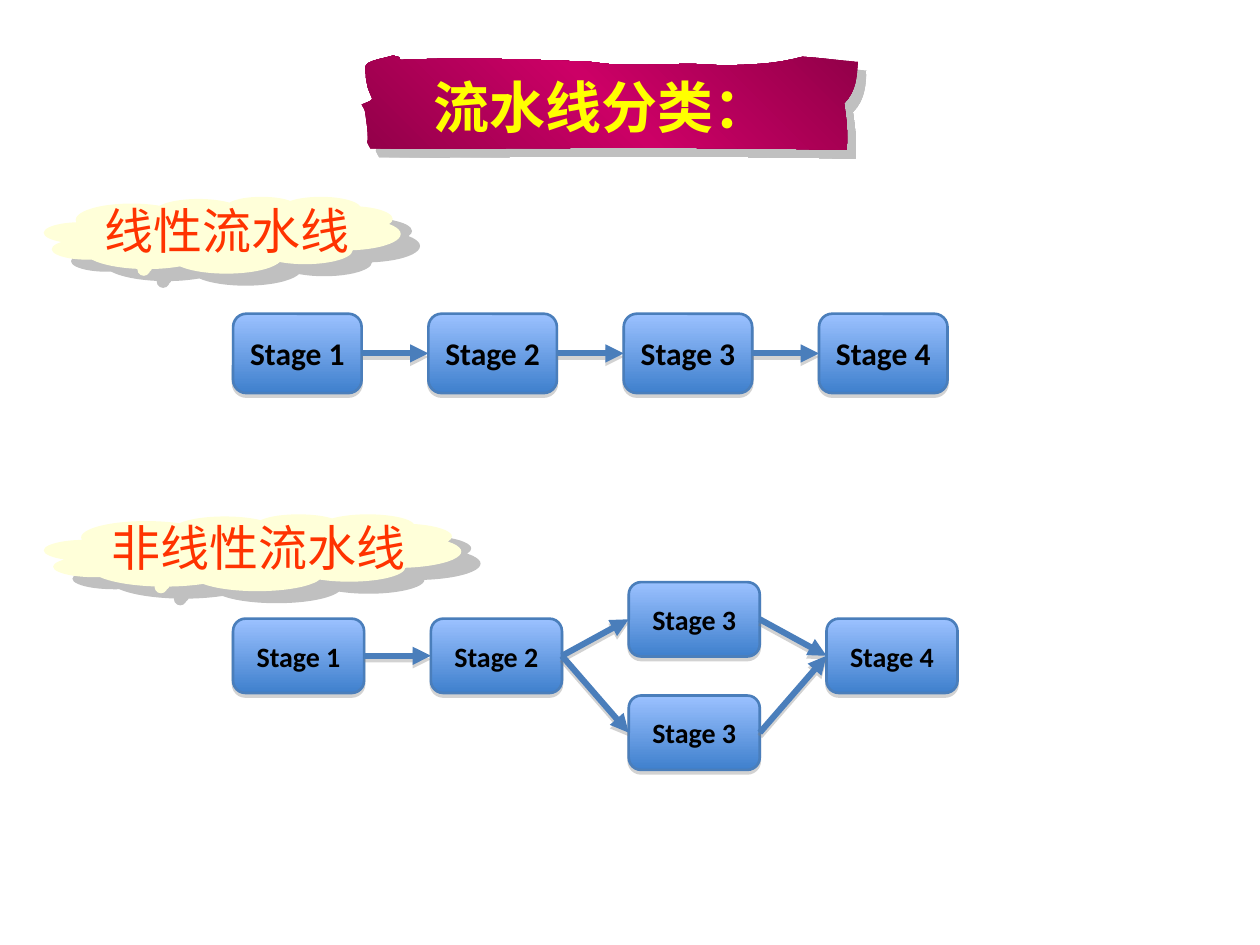
from lxml import etree
from pptx import Presentation
from pptx.dml.color import RGBColor
from pptx.enum.shapes import MSO_CONNECTOR as Conn, MSO_SHAPE as Kind
from pptx.enum.text import MSO_ANCHOR as Anchor, PP_ALIGN as Align
from pptx.oxml import parse_xml
from pptx.oxml.ns import qn
from pptx.util import Inches, Pt

NS = 'xmlns:a="http://schemas.openxmlformats.org/drawingml/2006/main"'
BLUE = "4A7EBB"
SOFT = ("808080", 35, 2, 90)
TEAR = [
    (0.21, 0.04),
    (0.74, 0.01), (1.27, 0.03), (1.81, 0.05),
    (2.15, 0.11), (2.52, 0.04), (2.87, 0.08),
    (3.14, 0.07), (3.27, 0.07), (3.5, 0.01),
    (3.66, 0.02), (3.79, 0.04), (3.94, 0.05),
    (3.93, 0.16), (3.93, 0.28), (3.83, 0.38),
    (3.85, 0.52), (3.86, 0.6), (3.85, 0.75),
    (2.59, 0.72), (1.3, 0.74), (0.07, 0.74),
    (0.01, 0.62), (0.08, 0.79), (0.03, 0.46),
    (0.03, 0.43), (0, 0.39), (0, 0.39),
    (0.17, 0.32), (0.03, 0.39), (0.03, 0.09),
    (0.03, 0.04), (0.2, 0.02), (0.25, 0),
    (0.31, 0.02), (0.29, 0), (0.31, 0.04),
]


def rgb(code):
    """Turn a hex string into a colour."""
    return RGBColor.from_string(code)


def effect(color, alpha, dist, angle):
    """Make an effect list holding one outer shadow."""
    return parse_xml(
        f'<a:effectLst {NS}><a:outerShdw blurRad="0" dist="{Pt(dist)}" '
        f'dir="{angle * 60000}" algn="ctr" rotWithShape="0"><a:srgbClr val="{color}">'
        f'<a:alpha val="{alpha * 1000}"/></a:srgbClr></a:outerShdw></a:effectLst>')


def shade(shape, look):
    """Give a shape its own shadow."""
    shape.shadow.inherit = False
    old = shape._element.spPr.find(qn("a:effectLst"))
    old.getparent().replace(old, effect(*look))


def blend(shape, stops, angle):
    """Fill a shape with a linear gradient."""
    shape.fill.solid()
    old = shape._element.spPr.find(qn("a:solidFill"))
    marks = "".join(f'<a:gs pos="{pos * 1000}"><a:srgbClr val="{color}"/></a:gs>'
                    for pos, color in stops)
    old.getparent().replace(old, parse_xml(
        f'<a:gradFill {NS} rotWithShape="1"><a:gsLst>{marks}</a:gsLst>'
        f'<a:lin ang="{angle * 60000}" scaled="0"/></a:gradFill>'))


def write(shape, text, size, font, color, bold=False, align=Align.CENTER):
    """Add one styled run to a shape and return it."""
    para = shape.text_frame.paragraphs[0]
    para.alignment = align
    run = para.add_run()
    run.text = text
    run.font.size, run.font.name, run.font.bold = Pt(size), font, bold
    run.font.color.rgb = rgb(color)
    return run


def label(slide, box, text, size, color, dark, **style):
    """Place a text box whose letters cast a shadow."""
    area = slide.shapes.add_textbox(*map(Inches, box))
    area.text_frame.word_wrap = True
    run = write(area, text, size, "Times New Roman", color, **style)
    run.font._element.find(qn("a:solidFill")).addnext(effect(dark, 100, 2, 45))
    return area


def curve(points, steps=8):
    """Sample a chain of cubic curves."""
    path = [points[0]]
    for i in range(1, len(points), 3):
        a, b, c, d = points[i - 1:i + 3]
        for n in range(1, steps + 1):
            t = n / steps
            u = 1 - t
            path.append(tuple(
                u**3 * p + 3 * u * u * t * q + 3 * u * t * t * r + t**3 * s
                for p, q, r, s in zip(a, b, c, d)))
    return path


def banner(slide, left, top, text):
    """Draw the torn ribbon and its title."""
    path = [(Inches(left + x), Inches(top + y)) for x, y in curve(TEAR)]
    draw = slide.shapes.build_freeform(*path[0])
    draw.add_line_segments(path[1:], close=True)
    ribbon = draw.convert_to_shape()
    blend(ribbon, [(0, "920049"), (50, "CC0066"), (100, "920049")], 315)
    ribbon.line.fill.background()
    shade(ribbon, ("C0C0C0", 100, 7.1, 45))
    area = label(slide, (left + 0.18, top + 0.15, 3.45, 0.59), text, 32,
                 "FFFF00", "5C002E", bold=True)
    area.text_frame.paragraphs[0].line_spacing = 0.9


def cloud(slide, left, top, width, inset, text):
    """Draw a cloud heading."""
    puff = slide.shapes.add_shape(
        Kind.CLOUD_CALLOUT, *map(Inches, (left, top, width, 0.61)))
    puff.adjustments[0], puff.adjustments[1] = -0.209, 0.426
    puff.fill.solid()
    puff.fill.fore_color.rgb = rgb("FFFFD9")
    puff.line.fill.background()
    shade(puff, ("C0C0C0", 100, 13, 32))
    label(slide, (left + inset, top - 0.02, width - 0.66, 0.57), text, 28,
          "FF3300", "000000", align=Align.LEFT)


def stage(slide, box, text, size):
    """Draw one stage of a pipeline."""
    node = slide.shapes.add_shape(Kind.ROUNDED_RECTANGLE, *map(Inches, box))
    blend(node, [(0, "9BC1FF"), (100, "3F80CD")], 90)
    node.line.color.rgb = rgb(BLUE)
    node.line.width = Pt(1.5)
    shade(node, SOFT)
    frame = node.text_frame
    frame.word_wrap = False
    frame.vertical_anchor = Anchor.MIDDLE
    frame.margin_top = frame.margin_bottom = Inches(0.1)
    write(node, text, size, "Calibri", "000000", bold=True)
    return node


def arrow(slide, start, end):
    """Join the right side of one stage to the left side of another."""
    link = slide.shapes.add_connector(Conn.STRAIGHT, 0, 0, 0, 0)
    link.begin_connect(start, 3)
    link.end_connect(end, 1)
    link.line.color.rgb = rgb(BLUE)
    link.line.width = Pt(3.5)
    etree.SubElement(link.line._get_or_add_ln(), qn("a:tailEnd"), type="triangle")
    link._element.spPr.append(effect(*SOFT))


def flow(slide, left, top, width, height, pitch, size, spots, links):
    """Draw a pipeline from (stage number, drop) spots and index links."""
    nodes = [stage(slide, (left + (num - 1) * pitch, top + drop, width, height),
                   f"Stage {num}", size) for num, drop in spots]
    for a, b in links:
        arrow(slide, nodes[a], nodes[b])


def main():
    """Build and save the slide."""
    deck = Presentation()
    deck.slide_width, deck.slide_height = Inches(10), Inches(7.5)
    slide = deck.slides.add_slide(deck.slide_layouts[6])
    banner(slide, 2.87, 0.44, "流水线分类：")
    flow(slide, 1.85, 2.49, 1.02, 0.63, 1.55, 18,
         [(1, 0), (2, 0), (3, 0), (4, 0)], [(0, 1), (1, 2), (2, 3)])
    flow(slide, 1.85, 4.91, 1.04, 0.59, 1.57, 16,
         [(1, 0), (2, 0), (3, -0.29), (4, 0), (3, 0.61)],
         [(0, 1), (1, 2), (1, 4), (2, 3), (4, 3)])
    cloud(slide, 0.35, 1.56, 2.83, 0.38, "线性流水线")
    cloud(slide, 0.35, 4.08, 3.31, 0.44, "非线性流水线")
    deck.save("out.pptx")


if __name__ == "__main__":
    main()
